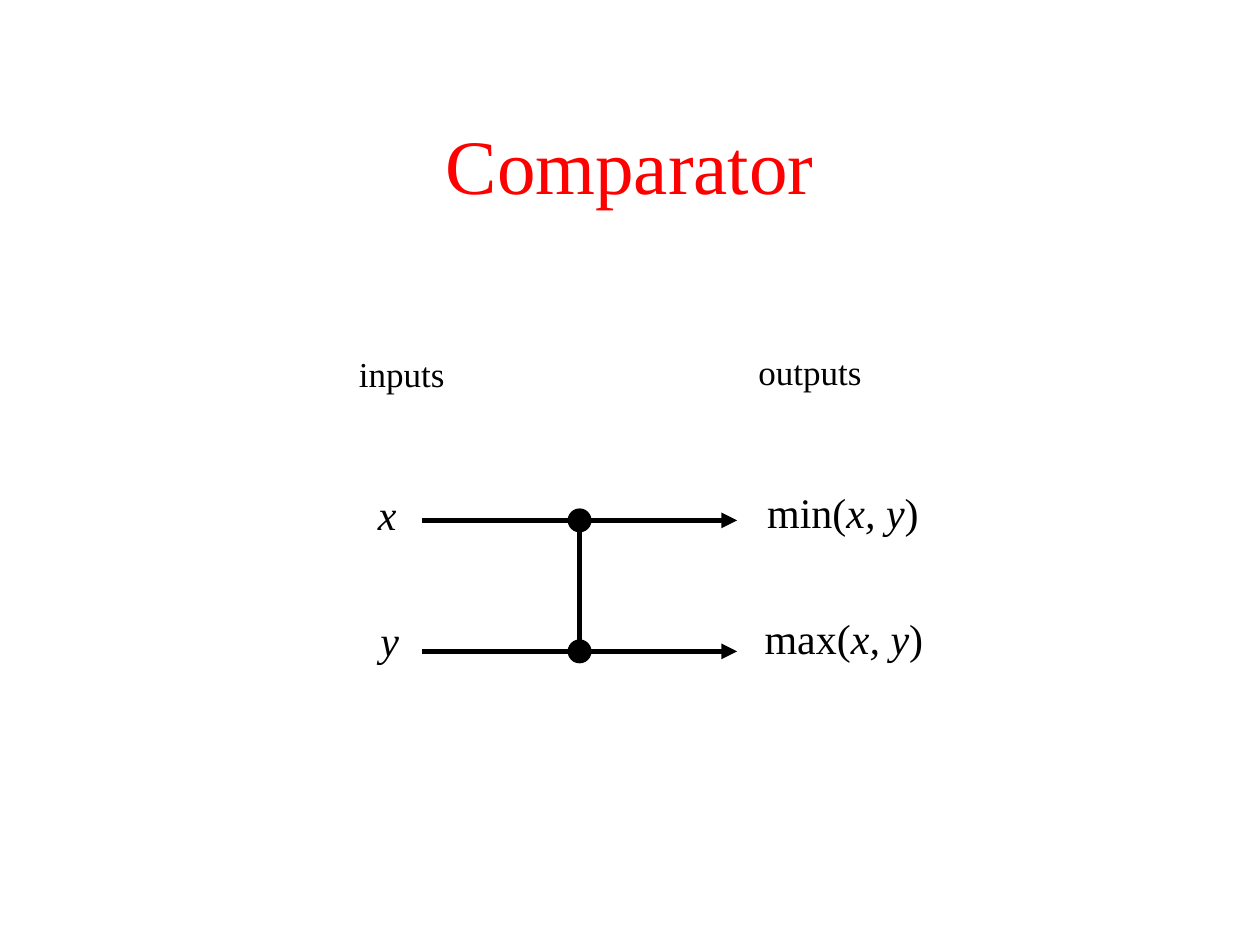
from dataclasses import dataclass

from lxml.etree import SubElement
from pptx import Presentation
from pptx.dml.color import RGBColor
from pptx.enum.shapes import MSO_CONNECTOR, MSO_SHAPE
from pptx.enum.text import MSO_ANCHOR, MSO_AUTO_SIZE, PP_ALIGN
from pptx.oxml.ns import qn
from pptx.util import Inches, Pt

FONT = "Times New Roman"
BLACK = "000000"
RED = "FF0000"
WIRE_LEFT, WIRE_RIGHT = 3.35, 5.85
TOP_WIRE, BOTTOM_WIRE = 4.13, 5.17
BAR_X = 4.6
DOT_SIZE = 0.18


@dataclass
class Label:
    """Text whose pieces are (wording, italic) pairs."""
    left: float
    top: float
    width: float
    height: float
    size: int
    pieces: list[tuple[str, bool]]
    color: str = BLACK


LABELS = [
    Label(2.75, 2.75, 0.88, 0.43, 20, [("inputs", False)]),
    Label(5.92, 2.73, 1.02, 0.43, 20, [("outputs", False)]),
    Label(2.9, 3.83, 0.35, 0.5, 24, [("x", True)]),
    Label(2.92, 4.83, 0.35, 0.5, 24, [("y", True)]),
    Label(5.99, 3.81, 1.4, 0.5, 24, [("min(", False), ("x, y", True), (")", False)]),
    Label(5.97, 4.81, 1.46, 0.5, 24, [("max(", False), ("x, y", True), (")", False)]),
]
TITLE = Label(0.75, 0.67, 8.5, 1.25, 44, [("Comparator", False)], RED)


def rgb(color: str) -> RGBColor:
    return RGBColor.from_string(color)


def add_label(slide, label: Label):
    sp = slide.shapes.add_textbox(Inches(label.left), Inches(label.top),
                                  Inches(label.width), Inches(label.height))
    tf = sp.text_frame
    tf.word_wrap = False
    tf.auto_size = MSO_AUTO_SIZE.SHAPE_TO_FIT_TEXT
    p = tf.paragraphs[0]
    p.font.name = FONT
    p.font.size = Pt(label.size)
    p.font.color.rgb = rgb(label.color)
    for wording, italic in label.pieces:
        r = p.add_run()
        r.text = wording
        r.font.italic = italic
    return sp


def add_title(slide, label: Label) -> None:
    tf = add_label(slide, label).text_frame
    tf.word_wrap = True
    tf.auto_size = MSO_AUTO_SIZE.NONE
    tf.vertical_anchor = MSO_ANCHOR.MIDDLE
    tf.paragraphs[0].alignment = PP_ALIGN.CENTER


def add_line(slide, x1: float, y1: float, x2: float, y2: float,
             arrow: bool = False) -> None:
    line = slide.shapes.add_connector(MSO_CONNECTOR.STRAIGHT, Inches(x1),
                                      Inches(y1), Inches(x2), Inches(y2))
    line.line.color.rgb = rgb(BLACK)
    line.line.width = Pt(3)
    props = line._element.spPr
    if arrow:
        SubElement(props.find(qn("a:ln")), qn("a:tailEnd"), type="triangle")
    SubElement(props, qn("a:effectLst"))


def add_dot(slide, x: float, y: float) -> None:
    sp = slide.shapes.add_shape(
        MSO_SHAPE.OVAL, Inches(x - DOT_SIZE / 2), Inches(y - DOT_SIZE / 2),
        Inches(DOT_SIZE), Inches(DOT_SIZE))
    sp.shadow.inherit = False
    sp.fill.solid()
    sp.fill.fore_color.rgb = rgb(BLACK)
    sp.line.color.rgb = rgb(BLACK)
    sp.line.width = Pt(0.75)


def main() -> None:
    prs = Presentation()
    prs.slide_width, prs.slide_height = Inches(10), Inches(7.5)
    slide = prs.slides.add_slide(prs.slide_layouts[6])

    # Title and labels
    add_title(slide, TITLE)
    for label in LABELS:
        add_label(slide, label)

    # Comparator: a bar joining two wires
    add_line(slide, BAR_X, TOP_WIRE, BAR_X, BOTTOM_WIRE)
    for y in (TOP_WIRE, BOTTOM_WIRE):
        add_dot(slide, BAR_X, y)
        add_line(slide, WIRE_LEFT, y, WIRE_RIGHT, y, arrow=True)

    prs.save("out.pptx")


if __name__ == "__main__":
    main()
